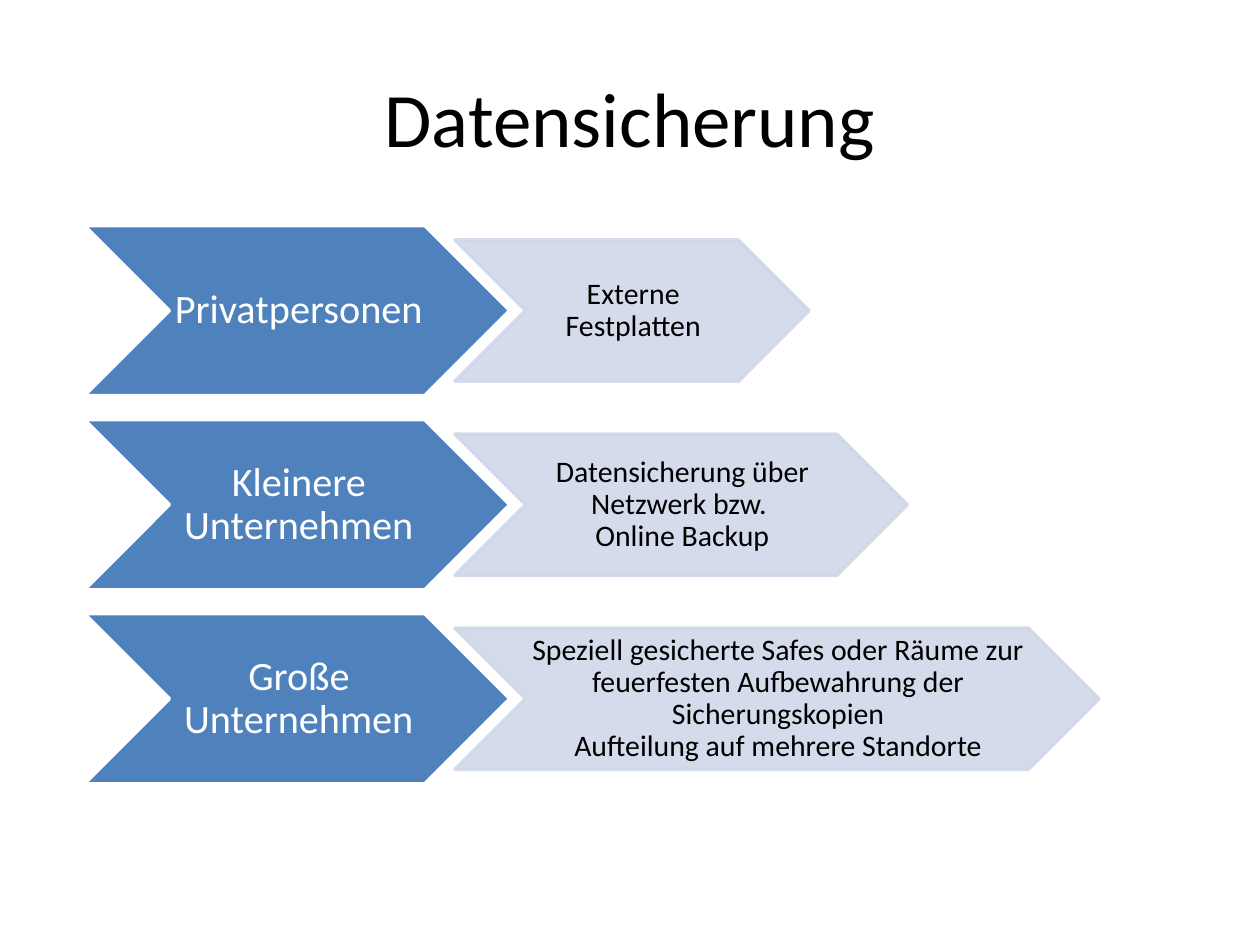
from dataclasses import dataclass

import pptx
import pptx.dml.color
import pptx.enum.shapes
import pptx.enum.text
import pptx.oxml
import pptx.oxml.ns
import pptx.util

Pt = pptx.util.Pt
RGBColor = pptx.dml.color.RGBColor

BLUE = RGBColor(0x4F, 0x81, 0xBD)
PALE = RGBColor(0xD0, 0xD8, 0xE8)
WHITE = RGBColor(0xFF, 0xFF, 0xFF)
BLACK = RGBColor(0x00, 0x00, 0x00)
FONT = "Calibri"

FIRST_TOP, ROW_PITCH = 128.9, 110.9


@dataclass(frozen=True)
class ChevronStyle:
    left: float
    height: float
    fill: RGBColor
    line: RGBColor
    text: RGBColor
    size: float
    inset_left: float
    inset_vertical: float
    opacity: int = 100


@dataclass(frozen=True)
class Measure:
    audience: str
    backup: str
    backup_width: float


AUDIENCE = ChevronStyle(48.2, 97.2, BLUE, WHITE, WHITE, 23, 2.2, 1.2)
AUDIENCE_WIDTH = 243.2
BACKUP = ChevronStyle(260, 80.7, PALE, PALE, BLACK, 17, 1.4, 0.8, opacity=90)

MEASURES = [
    Measure("Privatpersonen", "Externe Festplatten", 202.3),
    Measure("Kleinere Unternehmen",
            "Datensicherung über Netzwerk bzw. \vOnline Backup", 258.5),
    Measure("Große Unternehmen",
            "Speziell gesicherte Safes oder Räume zur feuerfesten Aufbewahrung der "
            "Sicherungskopien\vAufteilung auf mehrere Standorte", 368),
]


def set_opacity(chevron, percent: int) -> None:
    """Make fill and line of the chevron partly transparent."""
    for color in chevron._element.spPr.iter(pptx.oxml.ns.qn("a:srgbClr")):
        alpha = pptx.oxml.parse_xml(
            f'<a:alpha {pptx.oxml.ns.nsdecls("a")} val="{percent * 1000}"/>')
        color.append(alpha)


def add_chevron(shapes, style: ChevronStyle, middle: float, width: float, text: str) -> None:
    chevron = shapes.add_shape(
        pptx.enum.shapes.MSO_SHAPE.CHEVRON, Pt(style.left),
        Pt(middle - style.height / 2), Pt(width), Pt(style.height))
    chevron.shadow.inherit = False
    chevron.fill.solid()
    chevron.fill.fore_color.rgb = style.fill
    chevron.line.color.rgb = style.line
    chevron.line.width = Pt(2)
    if style.opacity < 100:
        set_opacity(chevron, style.opacity)

    frame = chevron.text_frame
    frame.word_wrap = True
    frame.vertical_anchor = pptx.enum.text.MSO_ANCHOR.MIDDLE
    frame.margin_left, frame.margin_right = Pt(style.inset_left), 0
    frame.margin_top = frame.margin_bottom = Pt(style.inset_vertical)
    label = frame.paragraphs[0]
    label.text = text
    label.alignment = pptx.enum.text.PP_ALIGN.CENTER
    label.line_spacing = 0.9
    label.font.name = FONT
    label.font.size = Pt(style.size)
    label.font.color.rgb = style.text


def main() -> None:
    deck = pptx.Presentation()
    deck.slide_width, deck.slide_height = Pt(720), Pt(540)
    slide = deck.slides.add_slide(deck.slide_layouts[5])

    # Title
    title = slide.shapes.title
    title.left, title.top, title.width, title.height = Pt(36), Pt(21.6), Pt(648), Pt(90)
    title.text_frame.vertical_anchor = pptx.enum.text.MSO_ANCHOR.MIDDLE
    heading = title.text_frame.paragraphs[0]
    heading.text = "Datensicherung"
    heading.alignment = pptx.enum.text.PP_ALIGN.CENTER
    heading.font.name = FONT
    heading.font.size = Pt(44)
    heading.font.color.rgb = BLACK

    # One row of chevrons per audience
    rows = slide.shapes.add_group_shape().shapes
    for index, measure in enumerate(MEASURES):
        middle = FIRST_TOP + index * ROW_PITCH + AUDIENCE.height / 2
        add_chevron(rows, AUDIENCE, middle, AUDIENCE_WIDTH, measure.audience)
        add_chevron(rows, BACKUP, middle, measure.backup_width, measure.backup)

    deck.save("out.pptx")


if __name__ == "__main__":
    main()
